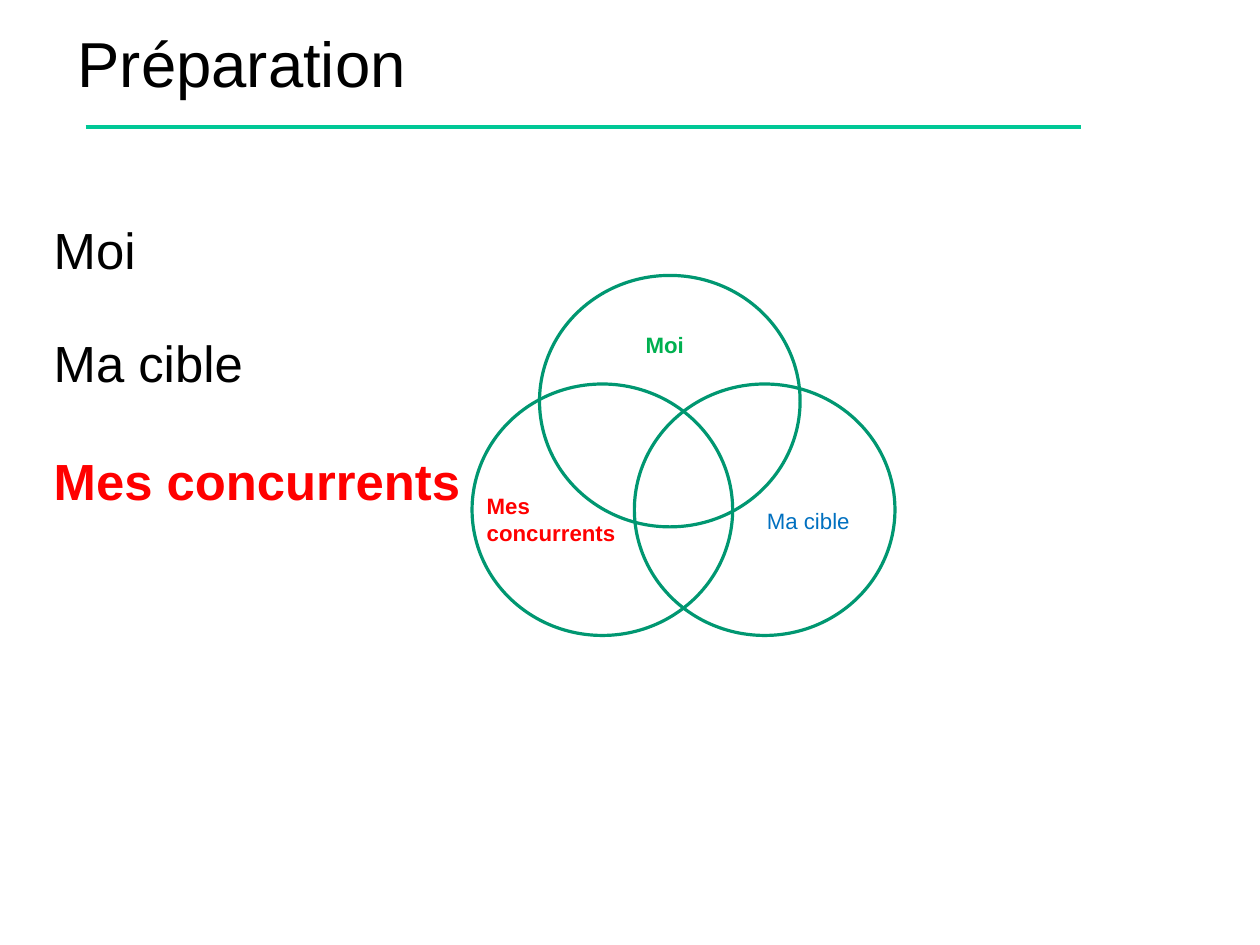
import pptx
import pptx.util
from dataclasses import dataclass
from lxml import etree
from pptx.dml.color import RGBColor
from pptx.enum.shapes import MSO_CONNECTOR, MSO_SHAPE
from pptx.enum.text import MSO_ANCHOR
from pptx.oxml.ns import qn


@dataclass(frozen=True)
class Theme:
    font: str = "Arial"
    black: str = "000000"
    red: str = "FF0000"
    green: str = "00B050"
    blue: str = "0070C0"
    rule: str = "00C896"
    ring: str = "009771"
    title_size: int = 40
    topic_size: int = 32
    label_size: int = 14
    topic_gap: float = 35.5
    tight: float = 0.93


THEME = Theme()

TITLE = "Préparation"
# text, colour, bold, line spacing
TOPICS = [
    ("Moi", THEME.black, False, THEME.tight),
    ("Ma cible", THEME.black, False, THEME.tight),
    ("Mes concurrents", THEME.red, True, 1.0),
]
# text, colour, bold, label box (left, top, width, height)
VENN_LABELS = [
    ("Moi", THEME.green, True, (5.55, 2.85, 1.09, 0.4)),
    ("Ma cible", THEME.blue, False, (6.61, 4.39, 1.42, 0.4)),
    ("Mes concurrents", THEME.red, True, (4.16, 4.26, 1.5, 0.57)),
]

SLIDE_WIDTH = pptx.util.Cm(28)
SLIDE_HEIGHT = pptx.util.Cm(21)

# Grid of one-inch cells
CELL = pptx.util.Inches(1)
TITLE_AREA = (0.68, -0.05, 9, 1.25)
TOPICS_AREA = (0.22, 1.93, 9, 4.95)
TOPIC_INDENT = 0.25
RULE_LEFT, RULE_RIGHT, RULE_ROW = 0.75, 9.46, 1.11
RING_SIZE = (2.28, 2.2)
LOWER_ROW = 3.36
RING_CORNERS = [(4.72, 2.41), (5.55, LOWER_ROW), (4.13, LOWER_ROW)]


def cells(*counts):
    return [round(count * CELL) for count in counts]


def add_text_area(slide, area, margins=None):
    frame = slide.shapes.add_textbox(*cells(*area)).text_frame
    frame.word_wrap = True
    if margins is not None:
        (frame.margin_left, frame.margin_top,
         frame.margin_right, frame.margin_bottom) = cells(*margins)
    return frame


def write(paragraph, text, size, color, bold=False, spacing=1.0):
    paragraph.text = text
    paragraph.line_spacing = spacing
    font = paragraph.font
    font.name, font.size, font.bold = THEME.font, pptx.util.Pt(size), bold
    font.color.rgb = RGBColor.from_string(color)


def add_header(slide):
    rule = slide.shapes.add_connector(
        MSO_CONNECTOR.STRAIGHT,
        *cells(RULE_LEFT, RULE_ROW, RULE_RIGHT, RULE_ROW))
    rule.line.color.rgb = RGBColor.from_string(THEME.rule)
    rule.line.width = pptx.util.Pt(2.25)
    etree.SubElement(rule._element.spPr, qn("a:effectLst"))

    title = add_text_area(slide, TITLE_AREA, (0, 0, 0, 0))
    title.vertical_anchor = MSO_ANCHOR.MIDDLE
    write(title.paragraphs[0], TITLE, THEME.title_size, THEME.black,
          spacing=THEME.tight)


def add_topics(slide):
    frame = add_text_area(slide, TOPICS_AREA, (TOPIC_INDENT, 0.03, 0, 0))
    for index, (text, color, bold, spacing) in enumerate(TOPICS):
        paragraph = frame.add_paragraph() if index else frame.paragraphs[0]
        write(paragraph, text, THEME.topic_size, color, bold, spacing)
        if index:
            paragraph.space_before = pptx.util.Pt(THEME.topic_gap)


def add_venn(slide):
    for corner in RING_CORNERS:
        ring = slide.shapes.add_shape(
            MSO_SHAPE.OVAL, *cells(*corner, *RING_SIZE))
        ring.shadow.inherit = False
        ring.fill.background()
        ring.line.color.rgb = RGBColor.from_string(THEME.ring)
        ring.line.width = pptx.util.Pt(2)
    for text, color, bold, area in VENN_LABELS:
        frame = add_text_area(slide, area)
        write(frame.paragraphs[0], text, THEME.label_size, color, bold)


def main():
    deck = pptx.Presentation()
    deck.slide_width = SLIDE_WIDTH
    deck.slide_height = SLIDE_HEIGHT
    slide = deck.slides.add_slide(deck.slide_layouts[6])
    add_header(slide)
    add_topics(slide)
    add_venn(slide)
    deck.save("out.pptx")


if __name__ == "__main__":
    main()
